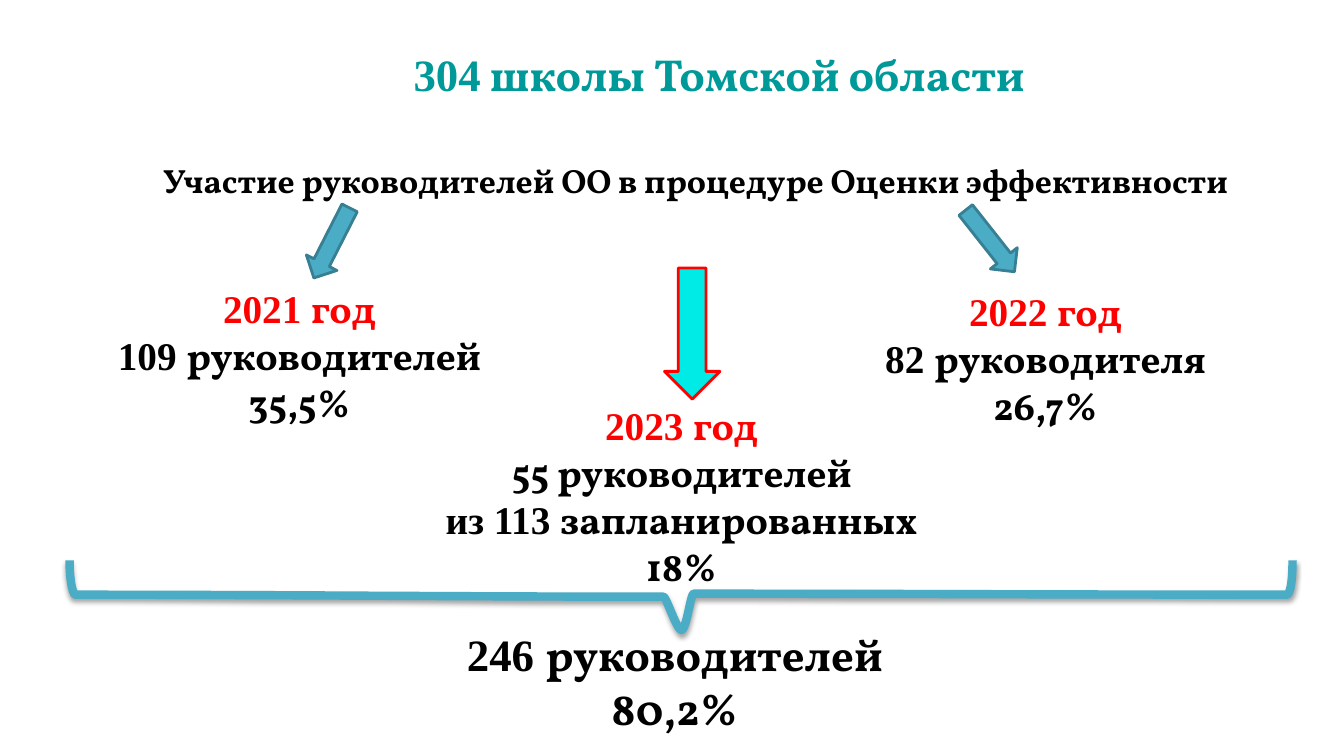
from dataclasses import dataclass

import lxml.etree
import pptx
import pptx.dml.color
import pptx.enum.shapes
import pptx.enum.text
import pptx.oxml
import pptx.oxml.ns
import pptx.util

Inches = pptx.util.Inches
Point = tuple[float, float]
ALIGN = pptx.enum.text.PP_ALIGN
ANCHOR = pptx.enum.text.MSO_ANCHOR


@dataclass(frozen=True)
class Theme:
    body_font: str = "Vollkorn"
    lead_font: str = "Times New Roman"
    black: str = "000000"
    red: str = "FF0000"
    teal: str = "009999"
    blue: str = "4BACC6"
    dark_blue: str = "377F92"
    cyan: str = "00EBE6"
    large: int = 32
    medium: int = 28
    small: int = 24
    arrow_line: float = 2
    brace_line: float = 6


THEME = Theme()


@dataclass(frozen=True)
class Line:
    """A paragraph: a lead in the lead font, then the rest in the body font."""
    lead: str
    rest: str
    color: str = THEME.black


@dataclass(frozen=True)
class TextBlock:
    left: float
    top: float
    width: float
    height: float
    size: int
    lines: tuple[Line, ...]
    align: ALIGN = ALIGN.CENTER
    anchor: ANCHOR = ANCHOR.TOP
    outlined: bool = False


@dataclass(frozen=True)
class Arrow:
    left: float
    top: float
    width: float
    height: float
    rotation: float
    fill: str
    line: str


TEXT_BLOCKS = (
    # Title and subtitle
    TextBlock(3.35, 0.11, 7.57, 1.25, THEME.large,
              (Line("304", " школы Томской области", THEME.teal),),
              anchor=ANCHOR.MIDDLE),
    TextBlock(1.52, 1.54, 11.14, 0.5, THEME.small,
              (Line("", "Участие руководителей ОО в процедуре Оценки эффективности"),),
              align=ALIGN.LEFT),
    # Years
    TextBlock(0.78, 2.77, 4.38, 1.51, THEME.medium,
              (Line("2021 ", "год", THEME.red),
               Line("109 ", "руководителей"),
               Line("", "35,5%"))),
    TextBlock(8.54, 2.8, 3.66, 1.51, THEME.medium,
              (Line("2022 ", "год", THEME.red),
               Line("82 ", "руководителя"),
               Line("", "26,7%"))),
    TextBlock(2.39, 3.93, 8.74, 1.99, THEME.medium,
              (Line("2023 ", "год", THEME.red),
               Line("", "55 руководителей"),
               Line("из 113 ", "запланированных"),
               Line("", "18%"))),
    # Total
    TextBlock(2.26, 6.17, 8.87, 1.18, THEME.large,
              (Line("246 ", "руководителей"), Line("", "80,2%")),
              outlined=True),
)

ARROWS = (
    Arrow(3.12, 2.02, 0.34, 0.78, 27, THEME.blue, THEME.dark_blue),
    Arrow(6.59, 2.66, 0.55, 1.3, 0, THEME.cyan, THEME.red),
    Arrow(9.65, 2, 0.34, 0.78, 321.7, THEME.blue, THEME.dark_blue),
)

# Brace: start point, then cubic curves as two controls and an end
BRACE_START: Point = (12.82, 5.56)
BRACE_CURVES: tuple[tuple[Point, Point, Point], ...] = (
    ((12.82, 5.75), (12.8, 5.9), (12.76, 5.9)),
    ((10.83, 5.9), (8.81, 5.89), (6.88, 5.89)),
    ((6.85, 5.89), (6.81, 6.24), (6.76, 6.25)),
    ((6.71, 6.25), (6.61, 5.92), (6.58, 5.92)),
    ((4.6, 5.92), (2.73, 5.9), (0.75, 5.9)),
    ((0.72, 5.9), (0.69, 5.75), (0.69, 5.56)),
)
CURVE_STEPS = 12


def rgb(color: str) -> pptx.dml.color.RGBColor:
    return pptx.dml.color.RGBColor.from_string(color)


def outline_text(span, color: str) -> None:
    outline = pptx.oxml.parse_xml(
        f'<a:ln {pptx.oxml.ns.nsdecls("a")} w="9525"><a:solidFill>'
        f'<a:srgbClr val="{color}"/></a:solidFill></a:ln>')
    span._r.get_or_add_rPr().insert(0, outline)


def add_text(page, block: TextBlock) -> None:
    box = page.shapes.add_textbox(Inches(block.left), Inches(block.top),
                                  Inches(block.width), Inches(block.height))
    frame = box.text_frame
    frame.word_wrap = True
    frame.vertical_anchor = block.anchor
    for index, line in enumerate(block.lines):
        para = frame.add_paragraph() if index else frame.paragraphs[0]
        para.alignment = block.align
        para.font.name = THEME.body_font
        para.font.size = pptx.util.Pt(block.size)
        para.font.bold = True
        para.font.color.rgb = rgb(line.color)
        for text, font in ((line.lead, THEME.lead_font), (line.rest, None)):
            if not text:
                continue
            span = para.add_run()
            span.text = text
            if font:
                span.font.name = font
            if block.outlined:
                outline_text(span, line.color)


def add_arrow(page, arrow: Arrow) -> None:
    shape = page.shapes.add_shape(
        pptx.enum.shapes.MSO_SHAPE.DOWN_ARROW, Inches(arrow.left),
        Inches(arrow.top), Inches(arrow.width), Inches(arrow.height))
    shape.rotation = arrow.rotation
    shape.shadow.inherit = False
    shape.fill.solid()
    shape.fill.fore_color.rgb = rgb(arrow.fill)
    shape.line.color.rgb = rgb(arrow.line)
    shape.line.width = pptx.util.Pt(THEME.arrow_line)


def curve_point(corners: tuple[Point, ...], t: float) -> Point:
    weights = ((1 - t) ** 3, 3 * t * (1 - t) ** 2, 3 * t ** 2 * (1 - t), t ** 3)
    x, y = (sum(w * corner[axis] for w, corner in zip(weights, corners))
            for axis in (0, 1))
    return Inches(x), Inches(y)


def add_brace(page) -> None:
    builder = page.shapes.build_freeform(*map(Inches, BRACE_START))
    start = BRACE_START
    for curve in BRACE_CURVES:
        points = [curve_point((start, *curve), step / CURVE_STEPS)
                  for step in range(1, CURVE_STEPS + 1)]
        builder.add_line_segments(points, close=False)
        start = curve[-1]
    brace = builder.convert_to_shape()
    brace.fill.background()
    brace.line.color.rgb = rgb(THEME.blue)
    brace.line.width = pptx.util.Pt(THEME.brace_line)
    # Soft shadow below the brace
    brace.shadow.inherit = False
    effects = brace._element.spPr.find(pptx.oxml.ns.qn("a:effectLst"))
    shadow = lxml.etree.SubElement(
        effects, pptx.oxml.ns.qn("a:outerShdw"), blurRad="40000",
        dist="23000", dir="5400000", rotWithShape="0")
    color = lxml.etree.SubElement(
        shadow, pptx.oxml.ns.qn("a:srgbClr"), val=THEME.black)
    lxml.etree.SubElement(color, pptx.oxml.ns.qn("a:alpha"), val="35000")


def main() -> None:
    deck = pptx.Presentation()
    deck.slide_width, deck.slide_height = Inches(13.33), Inches(7.5)
    page = deck.slides.add_slide(deck.slide_layouts[6])
    *upper_blocks, total = TEXT_BLOCKS
    for block in upper_blocks:
        add_text(page, block)
    for arrow in ARROWS:
        add_arrow(page, arrow)
    add_brace(page)
    add_text(page, total)
    deck.save("out.pptx")


if __name__ == "__main__":
    main()
